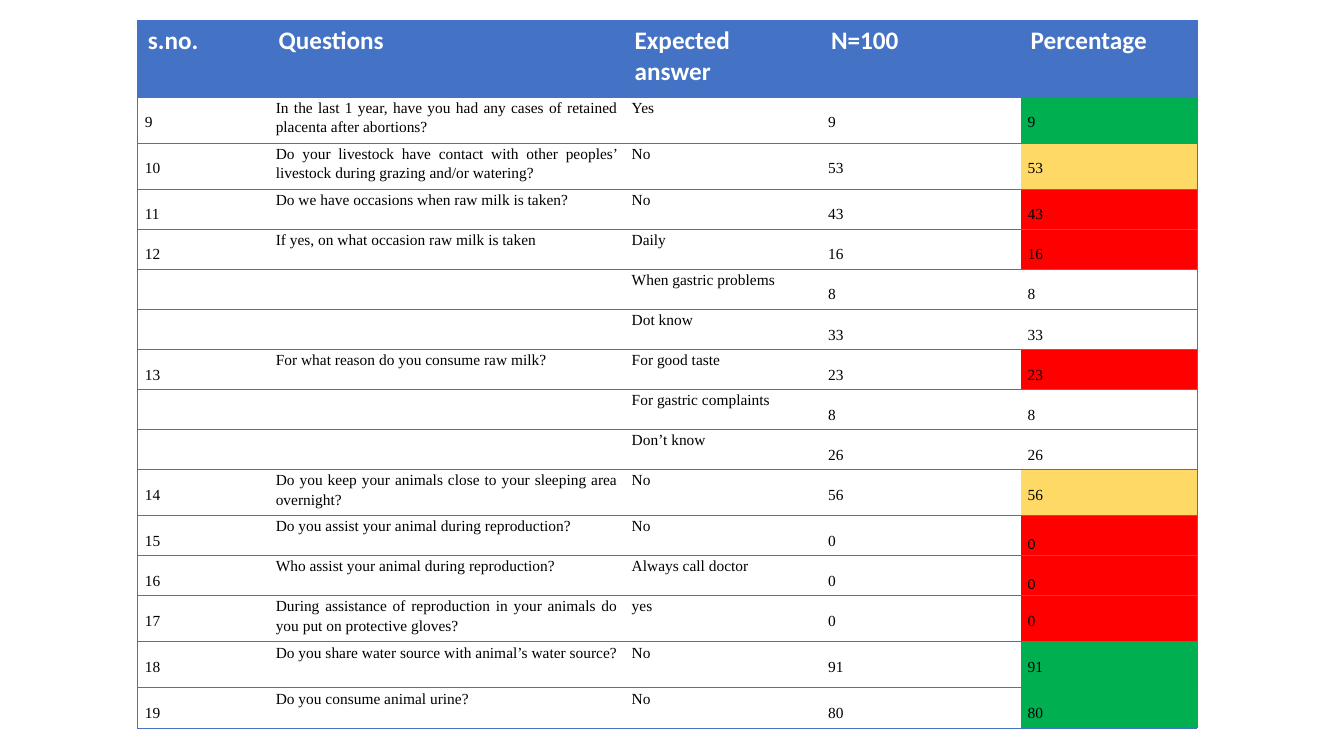
from lxml.etree import SubElement
from pptx import Presentation
from pptx.dml.color import RGBColor
from pptx.enum.text import PP_ALIGN
from pptx.oxml.ns import qn
from pptx.util import Cm, Pt

BLUE, GREEN, YELLOW, RED = "4472C4", "00B050", "FFD966", "FF0000"
NO_STYLE = "{2D5ABB26-0587-4C30-8999-92F81FD0307C}"
TALL, SHORT = 1.16, 1.01
COL_WIDTHS = [3.3, 8.97, 4.95, 5.03, 4.45]
HEADER = ["s.no.", "Questions", "Expected answer", "N=100", "Percentage"]
ROWS = [
    ("9", "In the last 1 year, have you had any cases of retained placenta after abortions?",
     "Yes", "9", GREEN, TALL),
    ("10", "Do your livestock have contact with other peoples’ livestock during grazing and/or watering?",
     "No", "53", YELLOW, TALL),
    ("11", "Do we have occasions when raw milk is taken?", "No", "43", RED, SHORT),
    ("12", "If yes, on what occasion raw milk is taken", "Daily", "16", RED, SHORT),
    ("", "", "When gastric problems", "8", None, SHORT),
    ("", "", "Dot know", "33", None, SHORT),
    ("13", "For what reason do you consume raw milk?", "For good taste", "23", RED, SHORT),
    ("", "", "For gastric complaints", "8", None, SHORT),
    ("", "", "Don’t know", "26", None, SHORT),
    ("14", "Do you keep your animals close to your sleeping area overnight?",
     "No", "56", YELLOW, TALL),
    ("15", "Do you assist your animal during reproduction?", "No", "0", RED, SHORT),
    ("16", "Who assist your animal during reproduction?", "Always call doctor", "0", RED, SHORT),
    ("17", "During assistance of reproduction in your animals do you put on protective gloves?",
     "yes", "0", RED, TALL),
    ("18", "Do you share water source with animal’s water source?", "No", "91", GREEN, TALL),
    ("19", "Do you consume animal urine?", "No", "80", GREEN, SHORT),
]


def rgb(value):
    """Turn a hex string into a colour."""
    return RGBColor.from_string(value)


def write(tf, text, size=11, font="Times New Roman", color="000000", bold=False,
          align=PP_ALIGN.JUSTIFY, spacing=1.0, after=0):
    """Put one formatted paragraph into a text frame."""
    p = tf.paragraphs[0]
    p.alignment, p.line_spacing, p.space_after = align, spacing, Pt(after)
    r = p.add_run()
    r.text = text
    r.font.size, r.font.name, r.font.bold = Pt(size), font, bold
    r.font.color.rgb = rgb(color)


def set_borders(cell, sides):
    """Draw thin blue lines on the given sides of a cell."""
    tcPr = cell._tc.get_or_add_tcPr()
    for side in sides:
        ln = SubElement(tcPr, qn(f"a:ln{side}"), w=str(Pt(0.5)))
        SubElement(SubElement(ln, qn("a:solidFill")), qn("a:srgbClr"), val=BLUE)


def set_fill(cell, color):
    """Fill a cell, or leave it clear when there is no colour."""
    if color:
        cell.fill.solid()
        cell.fill.fore_color.rgb = rgb(color)
    else:
        cell.fill.background()


def fill_body_row(cells, number, question, answer, count, color):
    """Write one survey answer across the five cells of its row."""
    for col, text in enumerate([number, question, answer, count, count]):
        cell = cells[col]
        cell.margin_left = cell.margin_right = Cm(0.18)
        cell.margin_top = cell.margin_bottom = 0
        set_fill(cell, color if col == 4 else None)
        if text:
            wordy = col in (1, 2)
            font = "Calibri" if col == 4 and number in ("15", "16") else "Times New Roman"
            write(cell.text_frame, text, font=font,
                  spacing=1.15 if wordy else 2.0, after=10 if wordy else 0)


def add_survey_table(s, left, top):
    """Place the survey table with its corner at the given point."""
    heights = [1.93] + [row[-1] for row in ROWS]
    frame = s.shapes.add_table(len(heights), len(COL_WIDTHS), Cm(left), Cm(top),
                               Cm(sum(COL_WIDTHS)), Cm(sum(heights)))
    table = frame.table
    table._tbl.tblPr.find(qn("a:tableStyleId")).text = NO_STYLE
    table.horz_banding = False
    for column, width in zip(table.columns, COL_WIDTHS):
        column.width = Cm(width)
    for row, height in zip(table.rows, heights):
        row.height = Cm(height)
        last = len(COL_WIDTHS) - 1
        for col, cell in enumerate(row.cells):
            set_borders(cell, {0: "LTB", last: "RTB"}.get(col, "TB"))
    for col, text in enumerate(HEADER):
        cell = table.cell(0, col)
        set_fill(cell, BLUE)
        write(cell.text_frame, text, size=18, font="Calibri", color="FFFFFF",
              bold=True, align=PP_ALIGN.LEFT)
    for i, (*values, _) in enumerate(ROWS, 1):
        fill_body_row(list(table.rows[i].cells), *values)


def main():
    """Build the slide and save it."""
    prs = Presentation()
    prs.slide_width, prs.slide_height = Cm(33.87), Cm(19.05)
    s = prs.slides.add_slide(prs.slide_layouts[6])
    add_survey_table(s, 3.47, 0.51)
    prs.save("out.pptx")


if __name__ == "__main__":
    main()
